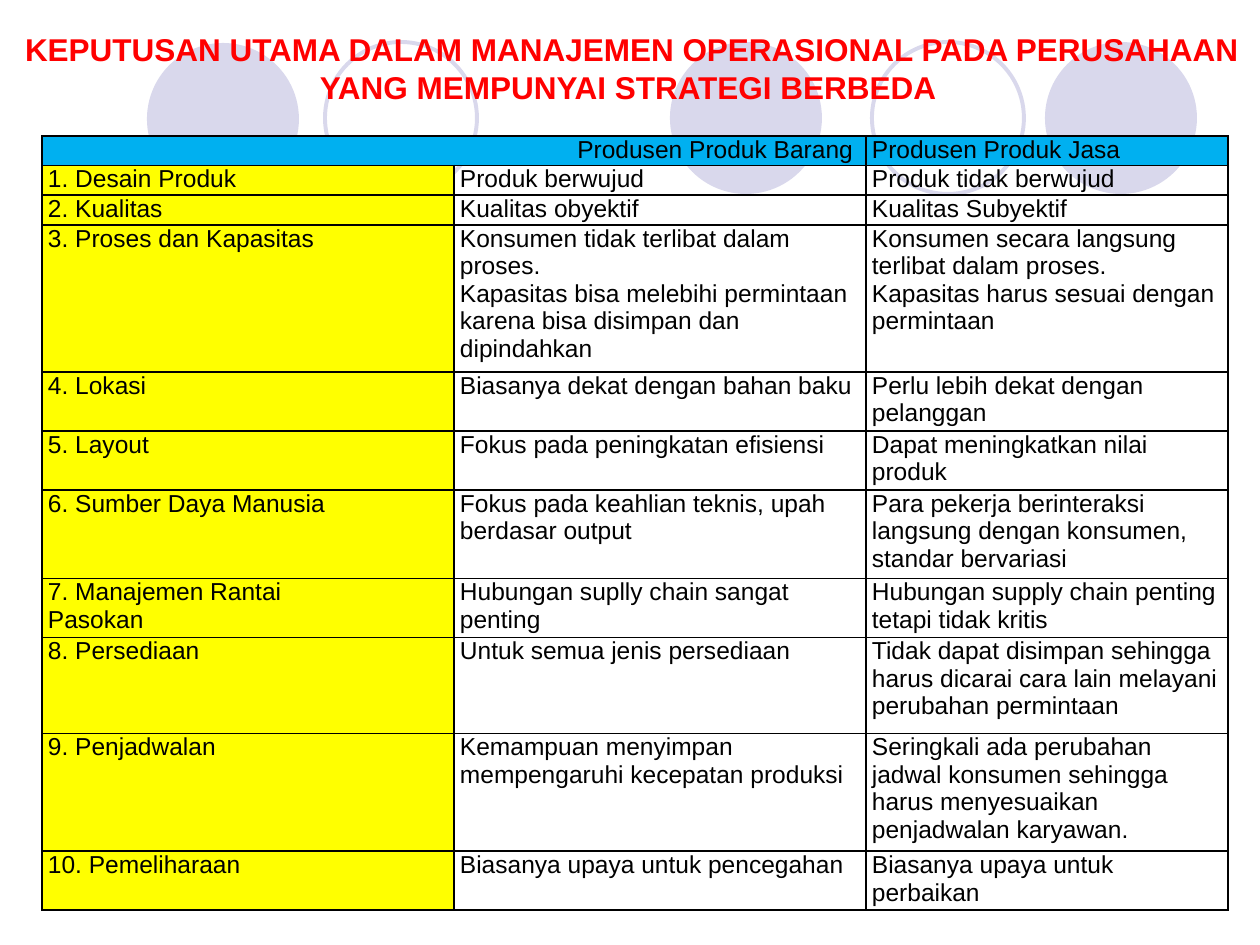
from typing import NamedTuple

from lxml.etree import SubElement
from pptx import Presentation
from pptx.dml.color import RGBColor
from pptx.enum.shapes import MSO_SHAPE
from pptx.enum.text import MSO_ANCHOR, PP_ALIGN
from pptx.oxml.ns import qn
from pptx.util import Emu, Pt

PX_PER_INCH = 126
FONT = "Arial"
LILAC, RED, BLACK = "D9D8EC", "FF0000", "000000"
BLUE, YELLOW = "00B0F0", "FFFF00"


class Circle(NamedTuple):
    left: int
    top: int
    filled: bool


class Decision(NamedTuple):
    topic: str
    goods: str
    services: str
    height: int


CIRCLE_SIZE = 152
CIRCLES = [
    Circle(670, 42, True),
    Circle(1045, 42, True),
    Circle(147, 43, True),
    Circle(872, 42, False),
    Circle(325, 42, False),
]

TITLE = ("KEPUTUSAN UTAMA DALAM MANAJEMEN OPERASIONAL PADA PERUSAHAAN "
         "YANG MEMPUNYAI STRATEGI BERBEDA ")

TABLE_LEFT, TABLE_TOP = 42, 136
COLUMN_WIDTHS = [412, 412, 362]
HEADER_HEIGHT = 29
# A line break starts a new paragraph in the cell
DECISIONS = [
    Decision("1. Desain Produk", "Produk berwujud", "Produk tidak berwujud", 29),
    Decision("2. Kualitas", "Kualitas obyektif", "Kualitas Subyektif", 30),
    Decision("3. Proses dan Kapasitas",
             "Konsumen tidak terlibat dalam proses.\n"
             "Kapasitas bisa melebihi permintaan karena bisa disimpan dan dipindahkan",
             "Konsumen secara langsung terlibat dalam proses.\n"
             "Kapasitas harus sesuai dengan permintaan", 147),
    Decision("4. Lokasi", "Biasanya dekat dengan bahan baku",
             "Perlu lebih dekat dengan pelanggan", 59),
    Decision("5. Layout", "Fokus pada peningkatan efisiensi",
             "Dapat meningkatkan nilai produk", 59),
    Decision("6. Sumber Daya Manusia",
             "Fokus pada keahlian teknis, upah berdasar output",
             "Para pekerja berinteraksi langsung dengan konsumen, standar bervariasi", 88),
    Decision("7. Manajemen Rantai\nPasokan", "Hubungan suplly chain sangat penting",
             "Hubungan supply chain penting tetapi tidak kritis", 59),
    Decision("8. Persediaan", "Untuk semua jenis persediaan",
             "Tidak dapat disimpan sehingga harus dicarai cara lain melayani "
             "perubahan permintaan", 96),
    Decision("9. Penjadwalan", "Kemampuan menyimpan mempengaruhi kecepatan produksi",
             "Seringkali ada perubahan jadwal konsumen sehingga harus menyesuaikan "
             "penjadwalan karyawan.", 118),
    Decision("10. Pemeliharaan", "Biasanya upaya untuk pencegahan",
             "Biasanya upaya untuk perbaikan", 59),
]


def px(length: int) -> Emu:
    return Emu(round(length * 914400 / PX_PER_INCH))


def color(value: str) -> RGBColor:
    return RGBColor.from_string(value)


def write(frame, text: str, size: int, ink: str, align=PP_ALIGN.LEFT, bold=False) -> None:
    frame.word_wrap = True
    frame.text = text
    for paragraph in frame.paragraphs:
        paragraph.alignment = align
        paragraph.font.name = FONT
        paragraph.font.size = Pt(size)
        paragraph.font.bold = bold
        paragraph.font.color.rgb = color(ink)


def draw_circle(page, circle: Circle) -> None:
    shape = page.shapes.add_shape(MSO_SHAPE.OVAL, px(circle.left), px(circle.top),
                                  px(CIRCLE_SIZE), px(CIRCLE_SIZE))
    shape.shadow.inherit = False
    if circle.filled:
        shape.fill.solid()
        shape.fill.fore_color.rgb = color(LILAC)
        shape.line.fill.background()
    else:
        shape.fill.background()
        shape.line.color.rgb = color(LILAC)
        shape.line.width = Pt(2.25)


def draw_title(page) -> None:
    box = page.shapes.add_textbox(px(2), px(0), px(1260), px(136))
    box.text_frame.vertical_anchor = MSO_ANCHOR.MIDDLE
    write(box.text_frame, TITLE, 18, RED, PP_ALIGN.CENTER, bold=True)


def style_cell(cell, fill: str | None) -> None:
    cell.margin_left = cell.margin_right = px(6)
    cell.margin_top = cell.margin_bottom = 0
    properties = cell._tc.get_or_add_tcPr()
    # Borders come before the fill in the cell properties
    for side in ("a:lnL", "a:lnR", "a:lnT", "a:lnB"):
        line = SubElement(properties, qn(side), w=str(Pt(1)))
        solid = SubElement(line, qn("a:solidFill"))
        SubElement(solid, qn("a:srgbClr"), val=BLACK)
    if fill:
        cell.fill.solid()
        cell.fill.fore_color.rgb = color(fill)
    else:
        cell.fill.background()


def draw_table(page) -> None:
    heights = [HEADER_HEIGHT] + [decision.height for decision in DECISIONS]
    table = page.shapes.add_table(
        len(heights), len(COLUMN_WIDTHS), px(TABLE_LEFT), px(TABLE_TOP),
        px(sum(COLUMN_WIDTHS)), px(sum(heights))).table
    for column, width in zip(table.columns, COLUMN_WIDTHS):
        column.width = px(width)
    for row, height in zip(table.rows, heights):
        row.height = px(height)

    # Header, with its first two columns joined
    for cell in table.rows[0].cells:
        style_cell(cell, BLUE)
    table.cell(0, 0).merge(table.cell(0, 1))
    write(table.cell(0, 0).text_frame, "Produsen Produk Barang ", 14, BLACK, PP_ALIGN.RIGHT)
    write(table.cell(0, 2).text_frame, "Produsen Produk Jasa", 14, BLACK)

    # One row for each decision
    for row_index, decision in enumerate(DECISIONS, start=1):
        texts = (decision.topic, decision.goods, decision.services)
        for column_index, text in enumerate(texts):
            cell = table.cell(row_index, column_index)
            style_cell(cell, YELLOW if column_index == 0 else None)
            write(cell.text_frame, text, 14, BLACK)


def main() -> None:
    deck = Presentation()
    deck.slide_width, deck.slide_height = px(1260), px(945)
    page = deck.slides.add_slide(deck.slide_layouts[6])
    for circle in CIRCLES:
        draw_circle(page, circle)
    draw_title(page)
    draw_table(page)
    deck.save("out.pptx")


if __name__ == "__main__":
    main()
